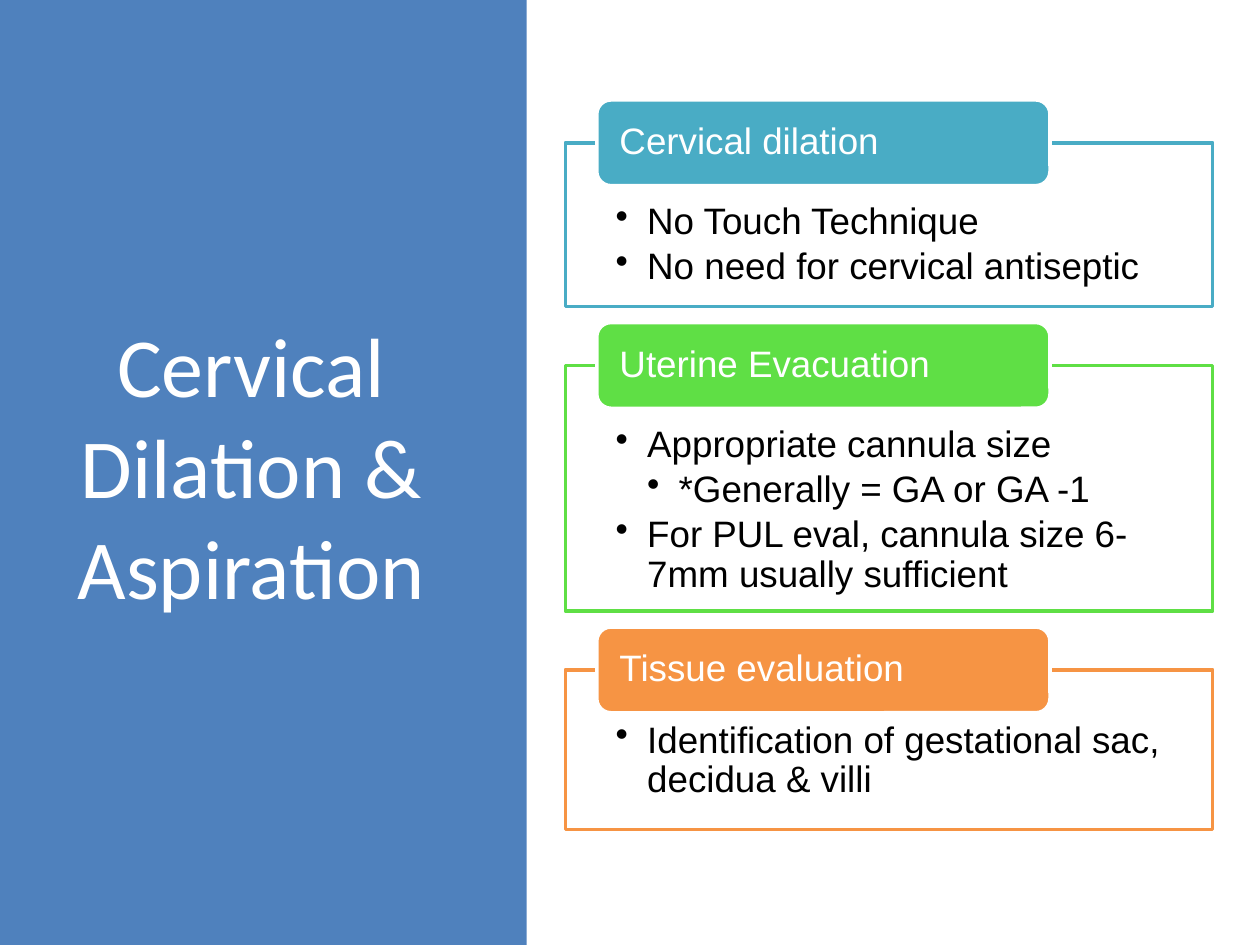
from dataclasses import dataclass

import pptx
import pptx.dml.color
import pptx.enum.shapes
import pptx.enum.text
import pptx.oxml
import pptx.oxml.ns
import pptx.util

Pt = pptx.util.Pt
RGB = pptx.dml.color.RGBColor.from_string
Shape = pptx.enum.shapes.MSO_SHAPE
Anchor = pptx.enum.text.MSO_ANCHOR
Align = pptx.enum.text.PP_ALIGN


@dataclass(frozen=True)
class Theme:
    panel: str = "4F81BD"
    white: str = "FFFFFF"
    black: str = "000000"
    teal: str = "49ACC5"
    green: str = "5FDF45"
    orange: str = "F69444"
    title_font: str = "Calibri"
    body_font: str = "Arial"
    title_size: float = 48
    body_size: float = 21
    outline: float = 2
    line_spacing: float = 0.9


THEME = Theme()
INDENT = 18
TAB_HEIGHT = 49
STEP_GAP = 33.6

# Heading, colour, frame height, (top, right) text insets, (level, text) points
STEPS = [
    ("Cervical dilation", THEME.teal, 93.6, (34.5, 28.8), [
        (1, "No Touch Technique"),
        (1, "No need for cervical antiseptic"),
    ]),
    ("Uterine Evacuation", THEME.green, 140.4, (34.5, 28.8), [
        (1, "Appropriate cannula size"),
        (2, "*Generally = GA or GA -1"),
        (1, "For PUL eval, cannula size 6-7mm usually sufficient"),
    ]),
    ("Tissue evaluation", THEME.orange, 91.2, (29.5, 8), [
        (1, "Identification of gestational sac, decidua & villi"),
    ]),
]


def add_block(slide, kind, box, fill, line=None):
    block = slide.shapes.add_shape(kind, *map(Pt, box))
    block.shadow.inherit = False
    block.fill.solid()
    block.fill.fore_color.rgb = RGB(fill)
    if line:
        block.line.color.rgb = RGB(line)
        block.line.width = Pt(THEME.outline)
    else:
        block.line.fill.background()
    return block


def set_frame(frame, anchor, insets):
    frame.word_wrap = True
    frame.vertical_anchor = anchor
    (frame.margin_left, frame.margin_top,
     frame.margin_right, frame.margin_bottom) = map(Pt, insets)


def set_font(paragraph, name, size, color):
    paragraph.font.name = name
    paragraph.font.size = Pt(size)
    paragraph.font.color.rgb = RGB(color)


def add_bullet(paragraph, level):
    paragraph.level = level
    properties = paragraph._p.get_or_add_pPr()
    properties.set("marL", str(Pt(INDENT * level)))
    properties.set("indent", str(Pt(-INDENT)))
    properties.append(pptx.oxml.parse_xml(
        f'<a:buChar {pptx.oxml.ns.nsdecls("a")} char="•"/>'))


def add_title_panel(slide, left, top, width, height):
    add_block(slide, Shape.RECTANGLE, (left, top, width, height), THEME.panel)
    title = slide.shapes.add_textbox(
        Pt(left + 31), Pt(top + 49), Pt(225), Pt(height - 107))
    set_frame(title.text_frame, Anchor.MIDDLE, (7.2, 3.6, 7.2, 3.6))
    paragraph = title.text_frame.paragraphs[0]
    paragraph.text = "Cervical Dilation & Aspiration"
    paragraph.alignment = Align.CENTER
    set_font(paragraph, THEME.title_font, THEME.title_size, THEME.white)


def add_step(slide, left, top, width, height, heading, color, insets, points):
    # Outlined frame with its bullet points
    inset_top, inset_right = insets
    body = add_block(slide, Shape.RECTANGLE, (left, top, width, height),
                     THEME.white, color)
    set_frame(body.text_frame, Anchor.TOP, (28.8, inset_top, inset_right, 0))
    for index, (level, text) in enumerate(points):
        if index:
            paragraph = body.text_frame.add_paragraph()
            paragraph.space_before = Pt(3.1)
        else:
            paragraph = body.text_frame.paragraphs[0]
        paragraph.text = text
        paragraph.alignment = Align.LEFT
        paragraph.line_spacing = THEME.line_spacing
        add_bullet(paragraph, level)
        set_font(paragraph, THEME.body_font, THEME.body_size, THEME.black)

    # Heading tab, centred on the frame's top edge
    tab = add_block(slide, Shape.ROUNDED_RECTANGLE,
                    (left + 18, top - TAB_HEIGHT / 2, width * 0.7, TAB_HEIGHT),
                    color, THEME.white)
    set_frame(tab.text_frame, Anchor.MIDDLE, (10.6, 0, 10.6, 0))
    paragraph = tab.text_frame.paragraphs[0]
    paragraph.text = heading
    paragraph.alignment = Align.LEFT
    paragraph.line_spacing = THEME.line_spacing
    set_font(paragraph, THEME.body_font, THEME.body_size, THEME.white)


def add_steps(slide, left, top, width):
    for heading, color, height, insets, points in STEPS:
        add_step(slide, left, top, width, height,
                 heading, color, insets, points)
        top += height + STEP_GAP


def main():
    deck = pptx.Presentation()
    deck.slide_width, deck.slide_height = Pt(720), Pt(540)
    slide = deck.slides.add_slide(deck.slide_layouts[6])
    add_title_panel(slide, 0, 0, 301, 540)
    add_steps(slide, 323, 81.6, 370)
    deck.save("out.pptx")


if __name__ == "__main__":
    main()
